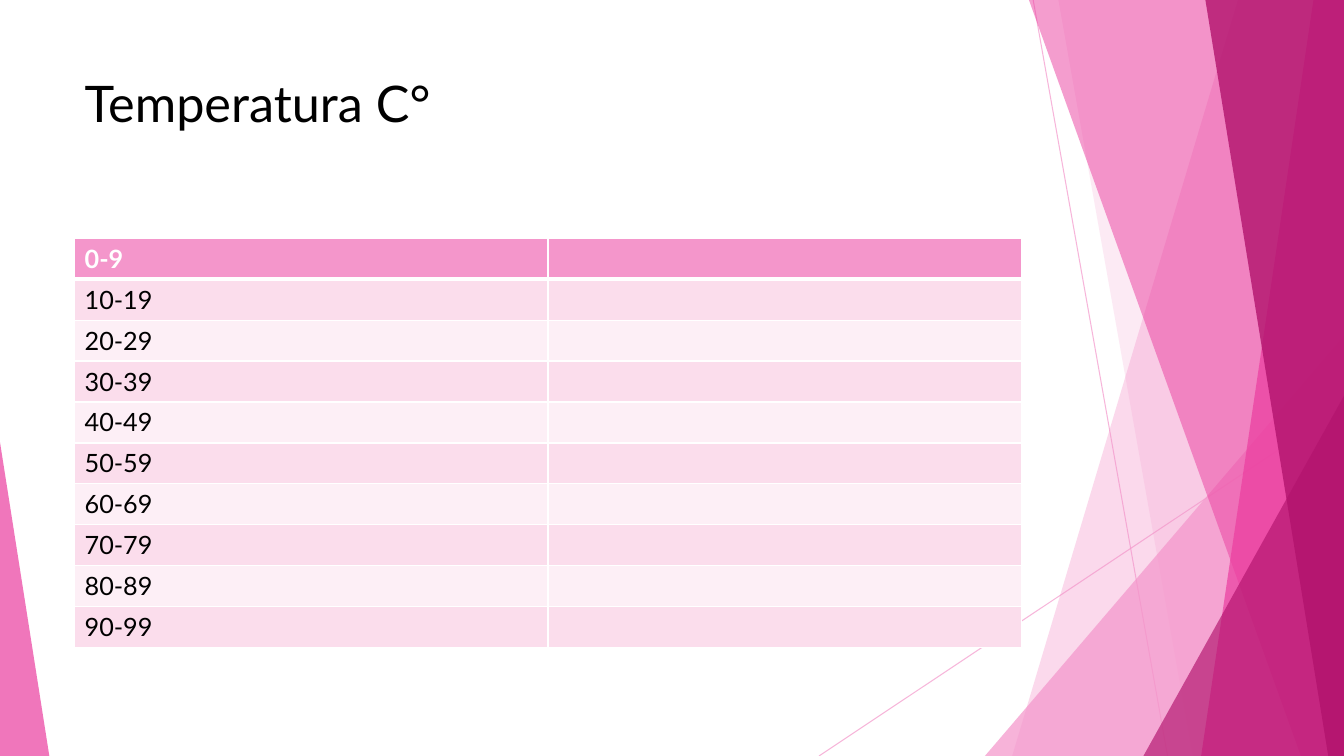
from lxml import etree
from pptx import Presentation
from pptx import util as u
from pptx.dml.color import RGBColor
from pptx.enum import shapes, text
from pptx.oxml import ns

PX = 9525
WIDE, HIGH = 1280, 720
FONT = "Lato"
PINK, ROSE, PLUM = "F496CB", "EB3D9F", "B2136D"
BANDS = ["FDEFF6", "FBDDEC"]


def px(*nums):
    return [u.Emu(n * PX) for n in nums]


def paint(part, tone, alpha=100):
    part.solid()
    part.fore_color.rgb = RGBColor.from_string(tone)
    if alpha < 100:
        for node in part.fore_color._xFill.iter(ns.qn("a:srgbClr")):
            etree.SubElement(node, ns.qn("a:alpha"), val=str(alpha * 1000))


def tint(shape, tone, alpha):
    shape.shadow.inherit = False
    paint(shape.fill, tone, alpha)
    shape.line.fill.background()


def write(para, words, size, tone, bold=False):
    run = para.add_run()
    run.text = words
    run.font.name = FONT
    run.font.size = u.Pt(size)
    run.font.bold = bold
    run.font.color.rgb = RGBColor.from_string(tone)


def ray(slide, start, end):
    line = slide.shapes.add_connector(
        shapes.MSO_CONNECTOR.STRAIGHT, *px(*start, *end))
    line.line.width = u.Pt(0.75)
    paint(line.line.fill, PINK, 70)
    etree.SubElement(line._element.spPr, ns.qn("a:effectLst"))


def blade(slide, box, head, foot, tone, alpha):
    left, top, width, height = box
    right, base = left + width, top + height
    pen = slide.shapes.build_freeform(left + head, top, scale=PX)
    pen.add_line_segments(
        [(right, top), (right, base), (left + foot, base)], close=True)
    tint(pen.convert_to_shape(), tone, alpha)


def wedge(slide, box, peak, tone, alpha):
    shape = slide.shapes.add_shape(
        shapes.MSO_SHAPE.ISOSCELES_TRIANGLE, *px(*box))
    shape.adjustments[0] = peak
    tint(shape, tone, alpha)


def fan(slide, box):
    left, top, width, height = box
    right, base = left + width, top + height

    def corner(wide, high):
        return right - wide, base - high, wide, high

    ray(slide, (left + 204, top), (left + 332, base))
    ray(slide, (right, top + 387), (left, base))
    blade(slide, box, 399, 184, PINK, 36)
    blade(slide, box, 228, 356, PINK, 20)
    wedge(slide, corner(342, 400), 1, PINK, 72)
    blade(slide, box, 200, 459, ROSE, 50)
    blade(slide, box, 471, 364, ROSE, 70)
    blade(slide, box, 368, 485, PLUM, 80)
    wedge(slide, corner(191, 343), 1, PLUM, 66)


def title(slide, box, words):
    head = slide.shapes.title
    head.left, head.top, head.width, head.height = px(*box)
    frame = head.text_frame
    frame.word_wrap = True
    frame.vertical_anchor = text.MSO_ANCHOR.TOP
    para = frame.paragraphs[0]
    para.alignment = text.PP_ALIGN.LEFT
    write(para, words, 36, "000000")


def edge(cell, base):
    props = cell._tc.get_or_add_tcPr()
    for side, width in zip("LRTB", (1, 1, 1, base)):
        line = etree.SubElement(
            props, ns.qn("a:ln" + side), w=str(u.Pt(width)))
        fill = etree.SubElement(line, ns.qn("a:solidFill"))
        etree.SubElement(fill, ns.qn("a:srgbClr"), val="FFFFFF")


def grid(slide, box, labels, cols):
    table = slide.shapes.add_table(len(labels), cols, *px(*box)).table
    for row, label in enumerate(labels):
        top = row == 0
        for col in range(cols):
            cell = table.cell(row, col)
            edge(cell, 3 if top else 1)
            paint(cell.fill, PINK if top else BANDS[row % 2])
        write(table.cell(row, 0).text_frame.paragraphs[0], label, 18,
              "FFFFFF" if top else "000000", top)


def main():
    deck = Presentation()
    deck.slide_width, deck.slide_height = px(WIDE, HIGH)
    slide = deck.slides.add_slide(deck.slide_layouts[5])
    fan(slide, (780, 0, 500, HIGH))
    wedge(slide, (0, 421, 47, 299), 0, ROSE, 70)
    title(slide, (71, 64, 902, 138), "Temperatura C°")
    spans = [f"{low}-{low + 9}" for low in range(0, 100, 10)]
    grid(slide, (71, 227, 902, 390), spans, 2)
    deck.save("out.pptx")


if __name__ == "__main__":
    main()
